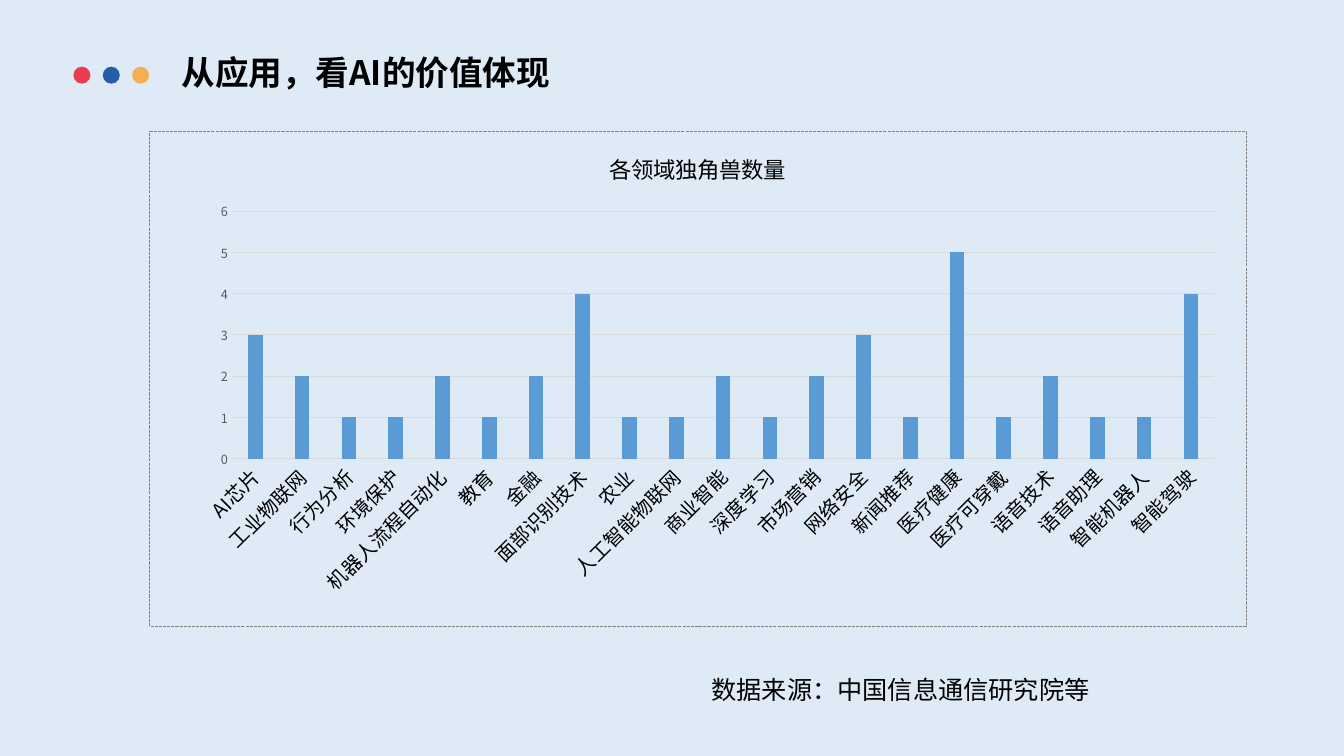
"""Build a slide charting the number of AI unicorns in each field."""
from dataclasses import dataclass

from lxml import etree
from pptx import Presentation
from pptx.chart.chart import Chart
from pptx.chart.data import CategoryChartData
from pptx.dml.color import RGBColor
from pptx.enum.chart import XL_CHART_TYPE, XL_TICK_MARK
from pptx.enum.shapes import MSO_SHAPE
from pptx.enum.text import MSO_ANCHOR, PP_ALIGN
from pptx.oxml import parse_xml
from pptx.oxml.ns import nsdecls, qn
from pptx.slide import Slide
from pptx.text.text import Font, TextFrame
from pptx.util import Cm, Pt

FONT = "Noto Sans CJK SC"
BACKGROUND = RGBColor(0xDE, 0xEB, 0xF7)
BLACK = RGBColor(0x00, 0x00, 0x00)
RED = RGBColor(0xE9, 0x3C, 0x4F)
BLUE = RGBColor(0x26, 0x5D, 0xA8)
AMBER = RGBColor(0xF3, 0xAF, 0x55)
BAR_BLUE = RGBColor(0x5B, 0x9B, 0xD5)
GRID_GREY = RGBColor(0xD9, 0xD9, 0xD9)
SCALE_GREY = RGBColor(0x59, 0x59, 0x59)


@dataclass(frozen=True)
class Field:
    """A field of AI and its number of unicorns."""

    name: str
    unicorns: int


@dataclass(frozen=True)
class Dot:
    """A coloured dot beside the title."""

    left: float
    color: RGBColor


FIELDS = [
    Field("AI芯片", 3),
    Field("工业物联网", 2),
    Field("行为分析", 1),
    Field("环境保护", 1),
    Field("机器人流程自动化", 2),
    Field("教育", 1),
    Field("金融", 2),
    Field("面部识别技术", 4),
    Field("农业", 1),
    Field("人工智能物联网", 1),
    Field("商业智能", 2),
    Field("深度学习", 1),
    Field("市场营销", 2),
    Field("网络安全", 3),
    Field("新闻推荐", 1),
    Field("医疗健康", 5),
    Field("医疗可穿戴", 1),
    Field("语音技术", 2),
    Field("语音助理", 1),
    Field("智能机器人", 1),
    Field("智能驾驶", 4),
]
DOTS = [Dot(1.85 + 0.74 * i, color) for i, color in enumerate((RED, BLUE, AMBER))]


def style_font(font: Font, size: float, color: RGBColor, bold: bool = False) -> None:
    """Set the typeface, size, colour and weight of a font."""
    font.name = FONT
    font.size = Pt(size)
    font.bold = bold
    font.color.rgb = color


def set_east_asian_font(root: etree._Element) -> None:
    """Give every Latin typeface under root its East Asian counterpart."""
    for latin in list(root.iter(qn("a:latin"))):
        latin.addnext(parse_xml(f'<a:ea {nsdecls("a")} typeface="{FONT}"/>'))


def write_line(frame: TextFrame, text: str, size: float, bold: bool = False) -> None:
    """Fill a text frame with one left-aligned line."""
    frame.word_wrap = True
    frame.vertical_anchor = MSO_ANCHOR.TOP
    paragraph = frame.paragraphs[0]
    paragraph.alignment = PP_ALIGN.LEFT
    paragraph.line_spacing = 1.0
    run = paragraph.add_run()
    run.text = text
    style_font(run.font, size, BLACK, bold)
    set_east_asian_font(paragraph._p)


def add_title(slide: Slide) -> None:
    """Place and fill the title placeholder."""
    title = slide.shapes.title
    title.left, title.top, title.width, title.height = Cm(4.32), Cm(1.17), Cm(29), Cm(1.27)
    write_line(title.text_frame, "从应用，看AI的价值体现", 24, bold=True)


def add_dot(slide: Slide, dot: Dot) -> None:
    """Draw one dot beside the title."""
    circle = slide.shapes.add_shape(
        MSO_SHAPE.OVAL, Cm(dot.left), Cm(1.68), Cm(0.43), Cm(0.43)
    )
    circle.shadow.inherit = False
    circle.fill.solid()
    circle.fill.fore_color.rgb = dot.color
    circle.line.fill.background()


def style_axes(chart: Chart) -> None:
    """Format both axes, the slanted labels and the gridlines."""
    fields, counts = chart.category_axis, chart.value_axis
    for axis, size, color in ((fields, 14, BLACK), (counts, 9, SCALE_GREY)):
        axis.major_tick_mark = XL_TICK_MARK.NONE
        axis.minor_tick_mark = XL_TICK_MARK.NONE
        style_font(axis.tick_labels.font, size, color)
    fields._element.find(f'{qn("c:txPr")}/{qn("a:bodyPr")}').set("rot", "-2700000")
    counts.minimum_scale, counts.maximum_scale, counts.major_unit = 0, 6, 1
    counts.format.line.fill.background()
    for line in (fields.format.line, counts.major_gridlines.format.line):
        line.color.rgb = GRID_GREY
        line.width = Pt(0.75)


def frame_chart(chart: Chart) -> None:
    """Fix the inner plot area and give the chart a dashed border."""
    plot_area = chart._chartSpace.chart.plotArea
    for automatic in plot_area.findall(qn("c:layout")):
        plot_area.remove(automatic)
    places = {"x": 0.075, "y": 0.161, "w": 0.896, "h": 0.5}
    modes = '<c:xMode val="edge"/><c:yMode val="edge"/>'
    sizes = "".join(f'<c:{key} val="{value}"/>' for key, value in places.items())
    plot_area.insert(0, parse_xml(
        f'<c:layout {nsdecls("c")}><c:manualLayout><c:layoutTarget val="inner"/>'
        f"{modes}{sizes}</c:manualLayout></c:layout>"
    ))
    chart._chartSpace.chart.addnext(parse_xml(
        f'<c:spPr {nsdecls("c", "a")}><a:noFill/><a:ln w="9525"><a:solidFill>'
        '<a:srgbClr val="808080"/></a:solidFill><a:prstDash val="sysDash"/>'
        "</a:ln></c:spPr>"
    ))


def add_unicorn_chart(slide: Slide) -> None:
    """Add the column chart of unicorns by field."""
    data = CategoryChartData()
    data.categories = [field.name for field in FIELDS]
    data.add_series("Series 1", [field.unicorns for field in FIELDS])
    chart = slide.shapes.add_chart(
        XL_CHART_TYPE.COLUMN_CLUSTERED, Cm(3.76), Cm(3.3), Cm(27.66), Cm(12.5), data
    ).chart
    style_font(chart.font, 10, BLACK)
    chart.has_legend = False
    chart.has_title = True
    heading = chart.chart_title.text_frame.paragraphs[0].add_run()
    heading.text = "各领域独角兽数量"
    style_font(heading.font, 16, BLACK)
    chart.chart_title.include_in_layout = False
    columns = chart.plots[0]
    columns.gap_width = 219
    columns.overlap = -27
    columns.vary_by_categories = False
    columns.series[0].format.fill.solid()
    columns.series[0].format.fill.fore_color.rgb = BAR_BLUE
    style_axes(chart)
    frame_chart(chart)
    set_east_asian_font(chart._chartSpace)


def main() -> None:
    """Build and save the slide."""
    deck = Presentation()
    deck.slide_width, deck.slide_height = Cm(33.87), Cm(19.05)
    slide = deck.slides.add_slide(deck.slide_layouts[5])
    slide.background.fill.solid()
    slide.background.fill.fore_color.rgb = BACKGROUND
    add_title(slide)
    for dot in DOTS:
        add_dot(slide, dot)
    source = slide.shapes.add_textbox(Cm(17.68), Cm(16.87), Cm(14.71), Cm(1.02))
    write_line(source.text_frame, "数据来源：中国信息通信研究院等", 18)
    add_unicorn_chart(slide)
    deck.save("out.pptx")


if __name__ == "__main__":
    main()
